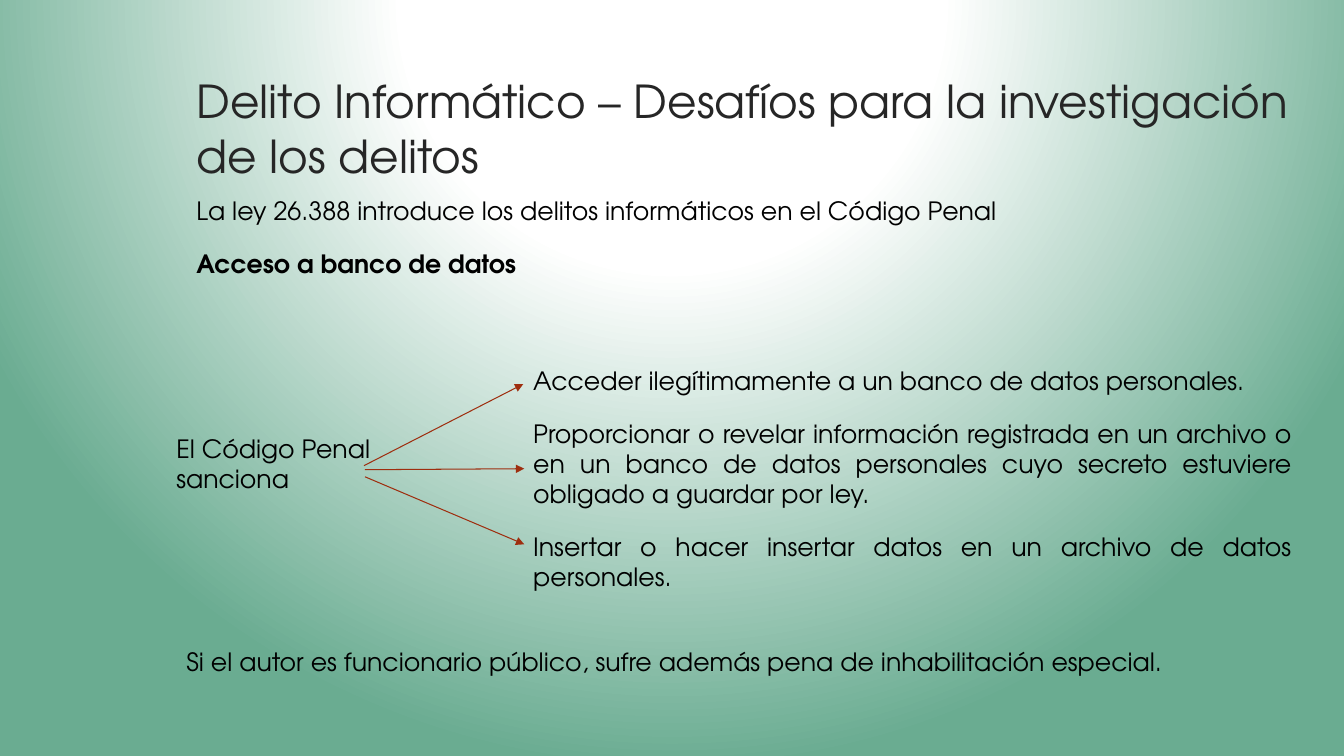
from pptx import Presentation
from pptx.dml.color import RGBColor
from pptx.enum.shapes import MSO_CONNECTOR as Connector
from pptx.enum.text import MSO_ANCHOR as Anchor, MSO_AUTO_SIZE as AutoSize, PP_ALIGN as Align
from pptx.oxml import parse_xml
from pptx.oxml.ns import nsdecls
from pptx.util import Inches, Pt

WIDTH, HEIGHT = 13.33, 7.5
FONT = "TeX Gyre Adventor"
COLORS = {"title": "262626", "text": "000000", "arrow": "9E2E0F",
          "center": "FFFFFF", "edge": "6AAC91"}
TITLE = "Delito Informático – Desafíos para la investigación de los delitos"
LAW = "La ley 26.388 introduce los delitos informáticos en el Código Penal"
TOPIC = "Acceso a banco de datos"
SUBJECT = "El Código Penal sanciona"
OFFENCES = [
    ("Acceder ilegítimamente a un banco de datos personales.", 0, 0.4),
    ("Proporcionar o revelar información registrada en un archivo o en un banco de datos "
     "personales cuyo secreto estuviere obligado a guardar por ley.", 0.52, 1.01),
    ("Insertar o hacer insertar datos en un archivo de datos personales.", 1.64, 0.71),
]
ARROWS = [((1.96, 1.04), (3.54, 0.23)),
          ((1.97, 1.08), (3.55, 1.07)),
          ((1.97, 1.15), (3.55, 1.82))]


def paint_background(slide):
    """Fill the slide with a round gradient centred above its top edge."""
    stops = "".join(
        f'<a:gs pos="{position * 1000}"><a:srgbClr val="{COLORS[name]}"/></a:gs>'
        for position, name in ((0, "center"), (35, "center"), (100, "edge")))
    slide._element.cSld.insert(0, parse_xml(
        f'<p:bg {nsdecls("p", "a")}><p:bgPr><a:gradFill rotWithShape="1">'
        f'<a:gsLst>{stops}</a:gsLst><a:path path="circle">'
        '<a:fillToRect l="50000" t="-80000" r="50000" b="180000"/></a:path>'
        '</a:gradFill><a:effectLst/></p:bgPr></p:bg>'))


def write_text(shape, text, size=18, color="text", bold=False, align=Align.LEFT):
    """Put one formatted paragraph in a shape."""
    frame = shape.text_frame
    frame.text = text
    frame_format = {"word_wrap": True, "auto_size": AutoSize.NONE,
                    "vertical_anchor": Anchor.TOP}
    for name, value in frame_format.items():
        setattr(frame, name, value)
    paragraph = frame.paragraphs[0]
    paragraph.alignment = align
    font = paragraph.runs[0].font
    for name, value in {"name": FONT, "size": Pt(size), "bold": bold}.items():
        setattr(font, name, value)
    font.color.rgb = RGBColor.from_string(COLORS[color])


def add_text(slide, box, text, **formats):
    """Add a text box at left, top, width and height in inches."""
    write_text(slide.shapes.add_textbox(*map(Inches, box)), text, **formats)


def add_arrow(slide, start, end):
    """Draw a thin arrow between two points in inches."""
    arrow = slide.shapes.add_connector(Connector.STRAIGHT, *map(Inches, (*start, *end)))
    arrow.line.width = Pt(0.75)
    arrow.line.color.rgb = RGBColor.from_string(COLORS["arrow"])
    arrow.line._get_or_add_ln().append(
        parse_xml(f'<a:tailEnd {nsdecls("a")} type="triangle"/>'))
    arrow._element.spPr.append(parse_xml(f'<a:effectLst {nsdecls("a")}/>'))


def add_heading(slide, box):
    """Place the title, the law and the topic from top to bottom."""
    left, top, width, height = box
    title = slide.shapes.title
    for name, value in zip(("left", "top", "width", "height"), (left, top, width, 1.14)):
        setattr(title, name, Inches(value))
    write_text(title, TITLE, size=32.4, color="title")
    title.text_frame.paragraphs[0].line_spacing = 1.0
    add_text(slide, (left, top + 1.21, width, 0.4), LAW)
    add_text(slide, (left, top + height - 0.71, width, 0.71), TOPIC, bold=True)


def add_offences(slide, box):
    """Place the subject on the left and fan arrows out to the offences."""
    left, top, width, height = box
    offence_left = left + 3.54
    for text, offset, text_height in OFFENCES:
        add_text(slide, (offence_left, top + offset, left + width - offence_left, text_height),
                 text, align=Align.JUSTIFY)
    for start, end in ARROWS:
        add_arrow(slide, *((left + x, top + y) for x, y in (start, end)))
    add_text(slide, (left, top + 0.67, 2.75, 0.71), SUBJECT)


def main():
    """Build the slide and save it."""
    presentation = Presentation()
    presentation.slide_width, presentation.slide_height = Inches(WIDTH), Inches(HEIGHT)
    slide = presentation.slides.add_slide(presentation.slide_layouts[5])
    paint_background(slide)
    add_heading(slide, (1.85, 0.68, 11.18, 2.44))
    add_offences(slide, (1.65, 3.58, 11.26, 2.35))
    add_text(slide, (1.75, 6.36, 10, 0.4),
             "Si el autor es funcionario público, sufre además pena de inhabilitación especial.")
    presentation.save("out.pptx")


if __name__ == "__main__":
    main()
